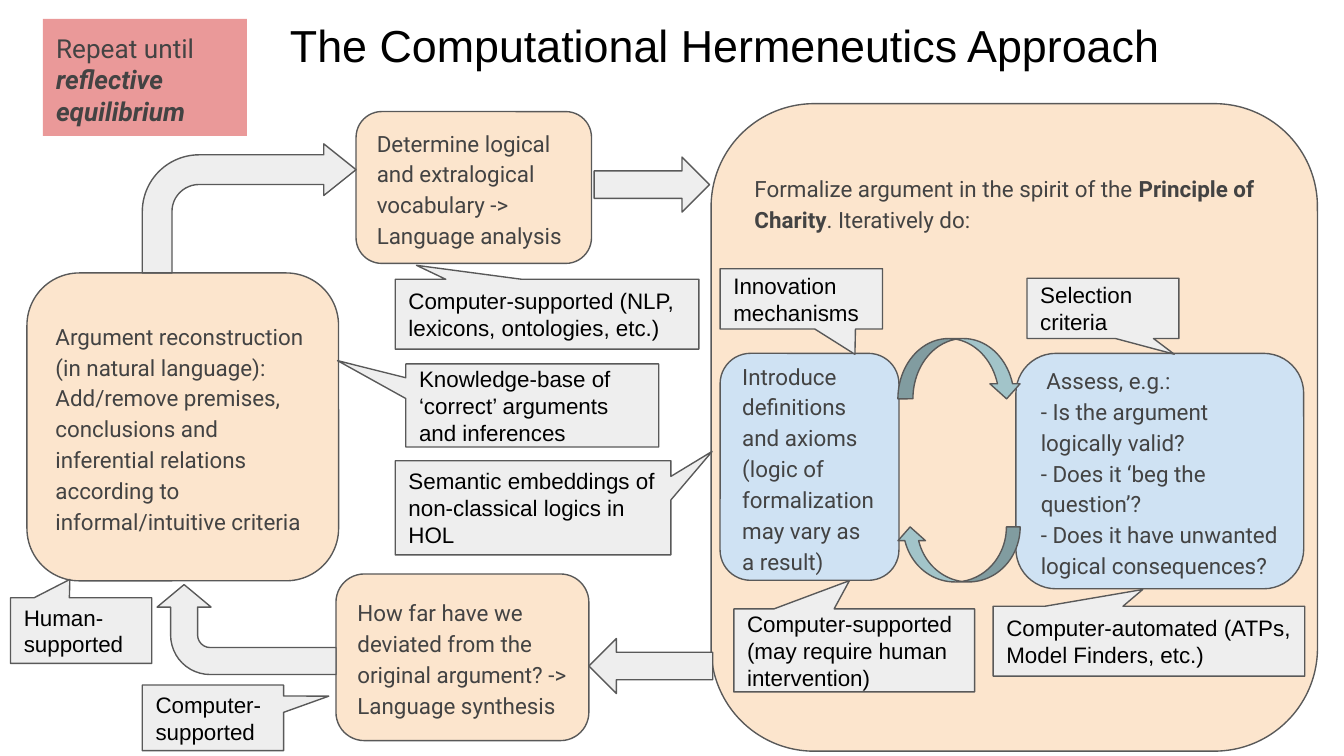
from pptx import Presentation
from pptx import util as u
from pptx.dml.color import RGBColor
from pptx.enum import shapes, text

SHAPE = shapes.MSO_SHAPE
COLORS = {
    "black": "000000", "body": "434343", "outline": "595959",
    "peach": "FCE5CD", "blue": "CFE2F3", "grey": "EEEEEE",
    "rose": "EA9999", "teal": "A2C4C9",
}
MARGIN = u.Cm(0.25)
FRAME = {
    "word_wrap": True, "auto_size": text.MSO_AUTO_SIZE.NONE,
    "margin_left": MARGIN, "margin_right": MARGIN,
    "margin_top": MARGIN, "margin_bottom": MARGIN,
}
TOP = {"vertical_anchor": text.MSO_ANCHOR.TOP}
MIDDLE = {"vertical_anchor": text.MSO_ANCHOR.MIDDLE}
TITLE_FONT = {"name": "Arial", "size": u.Pt(24), "bold": False}
CALLOUT_FONT = {"name": "Arial", "size": u.Pt(12)}
BODY_FONT = {"name": "Roboto", "size": u.Pt(12)}
REPEAT_FONT = {"name": "Roboto", "size": u.Pt(14)}


def apply(target, values):
    for name, value in values.items():
        setattr(target, name, value)


class Deck:
    def __init__(self, width, height):
        self.presentation = Presentation()
        apply(self.presentation, {"slide_width": u.Cm(width), "slide_height": u.Cm(height)})
        self.slide = None

    def add_slide(self):
        self.slide = self.presentation.slides.add_slide(self.presentation.slide_layouts[5])

    def title(self, place, words):
        shape = self.slide.shapes.title
        apply(shape, dict(zip(("left", "top", "width", "height"), map(u.Cm, place))))
        self.fill_text(shape, [words], TITLE_FONT, "black", TOP)

    def fill_text(self, shape, paragraphs, font, color, frame, spacing=1.0):
        text_frame = shape.text_frame
        apply(text_frame, FRAME | frame)
        for index, content in enumerate(paragraphs):
            paragraph = text_frame.paragraphs[0] if index == 0 else text_frame.add_paragraph()
            apply(paragraph, {"alignment": text.PP_ALIGN.LEFT, "line_spacing": spacing})
            runs = [(content, {})] if isinstance(content, str) else content
            for words, emphasis in runs:
                run = paragraph.add_run()
                run.text = words
                apply(run.font, font | emphasis)
                run.font.color.rgb = RGBColor.from_string(COLORS[color])

    def shape(self, kind, place, fill, adjustments=(), rotation=0, outlined=True):
        shape = self.slide.shapes.add_shape(kind, *map(u.Cm, place))
        shape.rotation = rotation
        shape.shadow.inherit = False
        shape.fill.solid()
        shape.fill.fore_color.rgb = RGBColor.from_string(COLORS[fill])
        if outlined:
            shape.line.width = u.Pt(0.75)
            shape.line.color.rgb = RGBColor.from_string(COLORS["outline"])
        else:
            shape.line.fill.background()
        for index, value in enumerate(adjustments):
            shape.adjustments[index] = value
        return shape

    def box(self, place, fill, paragraphs, frame=MIDDLE):
        shape = self.shape(SHAPE.ROUNDED_RECTANGLE, place, fill, [0.17])
        self.fill_text(shape, paragraphs, BODY_FONT, "body", frame, 1.15)

    def note(self, place, fill, paragraphs):
        shape = self.shape(SHAPE.RECTANGLE, place, fill, outlined=False)
        self.fill_text(shape, paragraphs, REPEAT_FONT, "body", TOP)

    def callout(self, place, tip, words):
        shape = self.shape(SHAPE.ROUNDED_RECTANGULAR_CALLOUT, place, "grey", [*tip, 0])
        self.fill_text(shape, [words], CALLOUT_FONT, "black", MIDDLE)


STEPS = [
    ((6.73, 2.11, 4.45, 2.87),
     "Determine logical and extralogical vocabulary -> Language analysis"),
    ((6.35, 10.85, 4.78, 3.15),
     "How far have we deviated from the original argument? -> Language synthesis"),
    ((0.51, 5.16, 5.89, 5.82),
     "Argument reconstruction (in natural language): Add/remove premises, conclusions "
     "and inferential relations according to informal/intuitive criteria"),
]
FORMALIZE = [[
    ("Formalize argument in the spirit of the ", {}),
    ("Principle of Charity", {"bold": True}),
    (". Iteratively do:", {}),
]]
REPEAT = [[
    ("Repeat until ", {}),
    ("reflective equilibrium", {"bold": True, "italic": True}),
]]
LOOP = [
    ((13.61, 6.68, 3.38, 4.29),
     ["Introduce definitions and axioms (logic of formalization may vary as a result)"]),
    ((19.2, 6.68, 5.44, 4.45),
     [" Assess, e.g.:", "- Is the argument logically valid?",
      "- Does it ‘beg the question’?",
      "- Does it have unwanted logical consequences?"]),
]
CALLOUTS = [
    ((0.2, 11.3, 2.67, 1.24), (-0.08, -0.78), "Human- supported"),
    ((18.77, 11.46, 5.89, 1.32), (-0.02, -0.74),
     "Computer-automated (ATPs, Model Finders, etc.)"),
    ((7.67, 6.88, 4.78, 1.57), (-0.77, -0.54),
     "Knowledge-base of ‘correct’ arguments and inferences"),
    ((7.47, 8.71, 5.21, 1.78), (0.65, -0.6),
     "Semantic embeddings of non-classical logics in HOL"),
    ((7.47, 5.28, 5.74, 1.32), (-0.43, -0.7),
     "Computer-supported (NLP, lexicons, ontologies, etc.)"),
    ((13.87, 11.51, 4.55, 1.57), (-0.02, -0.84),
     "Computer-supported (may require human intervention)"),
    ((13.61, 5.08, 3.07, 1.14), (0.33, 0.92), "Innovation mechanisms"),
    ((19.41, 5.26, 2.87, 1.14), (0.47, 0.76), "Selection criteria"),
    ((2.69, 12.95, 2.67, 1.24), (0.82, -0.33), "Computer-supported"),
]
ARROWS = [
    (SHAPE.BENT_ARROW, (2.69, 2.72, 4.04, 2.44), "grey", (0.23, 0.2, 0.25, 0.44), 0),
    (SHAPE.BENT_ARROW, (3.81, 10.21, 1.7, 3.38), "grey", (0.3, 0.3, 0.25, 0.44), 270),
    (SHAPE.RIGHT_ARROW, (11.23, 2.97, 2.18, 1.04), "grey", (0.5, 0.5), 0),
    (SHAPE.LEFT_ARROW, (11.13, 12.07, 2.34, 1.04), "grey", (0.5, 0.5), 0),
    (SHAPE.CURVED_DOWN_ARROW, (16.97, 6.4, 2.34, 1.14), "teal", (0.25, 0.5, 0.25), 0),
    (SHAPE.CURVED_DOWN_ARROW, (16.94, 9.96, 2.34, 1.04), "teal", (0.25, 0.5, 0.25), 180),
]


def main():
    deck = Deck(25.4, 14.29)
    deck.add_slide()
    deck.title((5.23, 0.08, 17.68, 1.24), "The Computational Hermeneutics Approach")
    for place, words in STEPS:
        deck.box(place, "peach", [words])
    deck.box((13.44, 1.96, 11.46, 12.24), "peach", FORMALIZE, TOP | {"margin_top": u.Cm(0.7)})
    deck.note((0.81, 0.36, 3.86, 2.21), "rose", REPEAT)
    for place, paragraphs in LOOP:
        deck.box(place, "blue", paragraphs)
    for place, tip, words in CALLOUTS:
        deck.callout(place, tip, words)
    for arrow in ARROWS:
        deck.shape(*arrow)
    deck.presentation.save("out.pptx")


if __name__ == "__main__":
    main()
